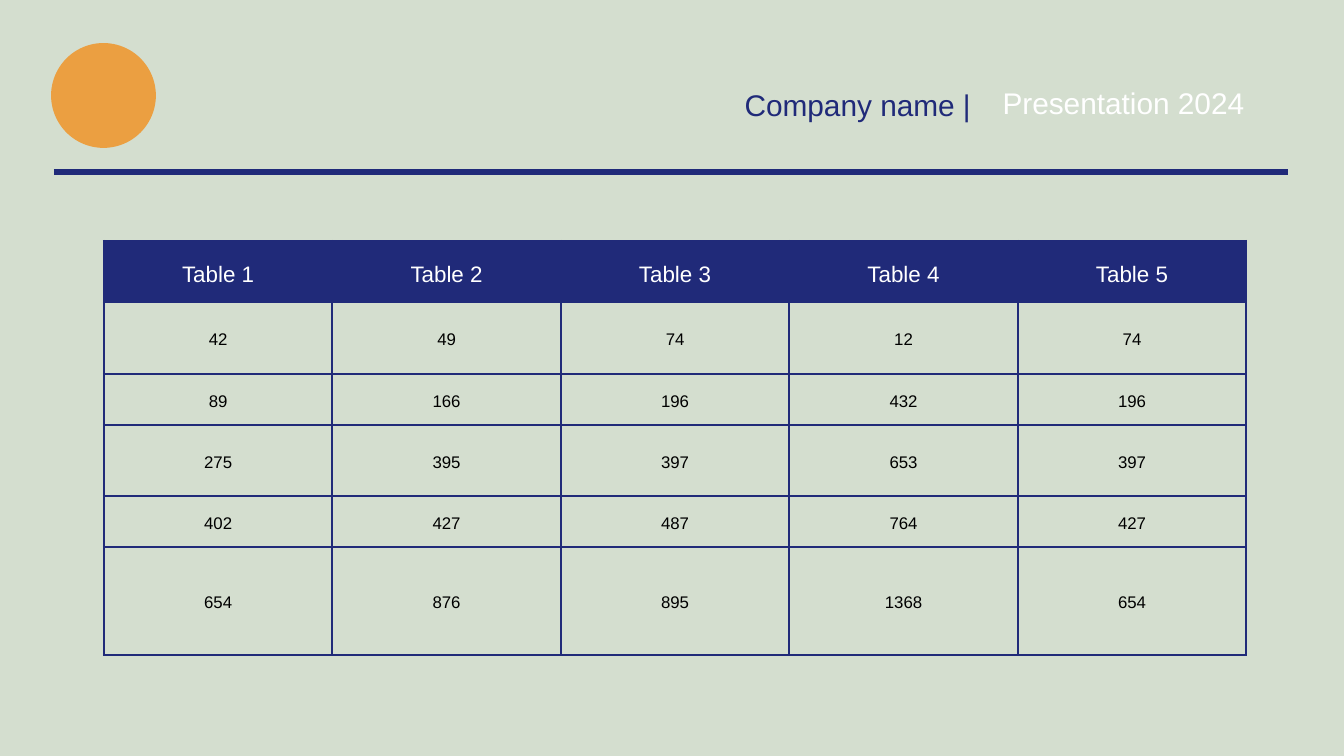
"""Build a slide with a header band and a five-column table."""
from dataclasses import dataclass

from lxml import etree
from pptx import Presentation
from pptx.dml.color import RGBColor
from pptx.enum.shapes import MSO_CONNECTOR, MSO_SHAPE
from pptx.enum.text import MSO_ANCHOR, MSO_AUTO_SIZE, PP_ALIGN
from pptx.oxml.ns import qn
from pptx.slide import Slide
from pptx.table import _Cell
from pptx.text.text import TextFrame
from pptx.util import Inches, Pt

STRAIGHT = MSO_CONNECTOR.STRAIGHT
OVAL = MSO_SHAPE.OVAL
MIDDLE = MSO_ANCHOR.MIDDLE
CENTER = PP_ALIGN.CENTER
LEFT = PP_ALIGN.LEFT
FIT_SHAPE = MSO_AUTO_SIZE.SHAPE_TO_FIT_TEXT

SAGE = RGBColor(0xD4, 0xDE, 0xCF)
NAVY = RGBColor(0x20, 0x2A, 0x79)
ORANGE = RGBColor(0xEB, 0x9F, 0x41)
WHITE = RGBColor(0xFF, 0xFF, 0xFF)
BLACK = RGBColor(0x00, 0x00, 0x00)

WIDTH = Inches(10)
HEIGHT = WIDTH * 9 // 16
FONT = "Arial"
BORDER = Pt(1.1)
COLUMN_WIDTH = Inches(1.7)
ROW_HEIGHTS = (0.46, 0.53, 0.38, 0.53, 0.38, 0.8)
CELL_FORMAT = {
    "vertical_anchor": MIDDLE,
    "margin_left": Inches(0.08),
    "margin_right": Inches(0.08),
    "margin_top": Inches(0.08),
    "margin_bottom": Inches(0.08),
}
LABEL_FORMAT = {
    "word_wrap": True,
    "auto_size": FIT_SHAPE,
    "margin_left": 0,
    "margin_right": 0,
    "margin_top": 0,
    "margin_bottom": 0,
}
TABLE_FORMAT = {"first_row": False, "horz_banding": False}

HEADINGS = tuple(f"Table {number}" for number in range(1, 6))
VALUES = (
    (42, 49, 74, 12, 74),
    (89, 166, 196, 432, 196),
    (275, 395, 397, 653, 397),
    (402, 427, 487, 764, 427),
    (654, 876, 895, 1368, 654),
)


@dataclass(frozen=True)
class Label:
    """A header text placed by percentages of the slide's size."""

    text: str
    left: float
    top: float
    width: float
    color: RGBColor


LABELS = (
    Label("Presentation 2024", 74.6, 9.8, 20.7, WHITE),
    Label("Company name |", 55.4, 10.1, 19.2, NAVY),
)


def across(percent: float) -> int:
    """Return a percentage of the slide's width."""
    return round(WIDTH * percent / 100)


def down(percent: float) -> int:
    """Return a percentage of the slide's height."""
    return round(HEIGHT * percent / 100)


def apply_format(target: object, values: dict) -> None:
    """Set each named attribute on the target."""
    for name, value in values.items():
        setattr(target, name, value)


def write_text(
    frame: TextFrame, text: str, size: float, color: RGBColor, spacing: float, alignment: PP_ALIGN
) -> None:
    """Write one formatted paragraph."""
    paragraph = frame.paragraphs[0]
    apply_format(paragraph, {"alignment": alignment, "line_spacing": spacing})
    run = paragraph.add_run()
    run.text = text
    apply_format(run.font, {"name": FONT, "size": Pt(size), "bold": False})
    run.font.color.rgb = color


def add_borders(cell: _Cell) -> None:
    """Draw a navy line on all four sides of a cell."""
    properties = cell._tc.get_or_add_tcPr()
    for position, side in enumerate(("lnL", "lnR", "lnT", "lnB")):
        line = etree.Element(qn(f"a:{side}"), w=str(BORDER))
        fill = etree.SubElement(line, qn("a:solidFill"))
        etree.SubElement(fill, qn("a:srgbClr"), val=str(NAVY))
        properties.insert(position, line)


def add_label(slide: Slide, label: Label) -> None:
    """Add a header text."""
    shape = slide.shapes.add_textbox(
        across(label.left), down(label.top), across(label.width), down(5)
    )
    apply_format(shape.text_frame, LABEL_FORMAT)
    write_text(shape.text_frame, label.text, 16, label.color, 1.3, LEFT)


def add_value_table(slide: Slide) -> None:
    """Add the table with its heading row and values."""
    rows = (HEADINGS, *VALUES)
    table = slide.shapes.add_table(
        len(rows), len(HEADINGS), across(7.73), down(31.85),
        COLUMN_WIDTH * len(HEADINGS), Inches(sum(ROW_HEIGHTS)),
    ).table
    apply_format(table, TABLE_FORMAT)
    for column in table.columns:
        column.width = COLUMN_WIDTH
    for row_index, (row, height) in enumerate(zip(rows, ROW_HEIGHTS)):
        table.rows[row_index].height = Inches(height)
        is_heading = row_index == 0
        size, color = (12, WHITE) if is_heading else (9, BLACK)
        for column_index, value in enumerate(row):
            cell = table.cell(row_index, column_index)
            apply_format(cell, CELL_FORMAT)
            if is_heading:
                cell.fill.solid()
                cell.fill.fore_color.rgb = NAVY
            else:
                cell.fill.background()
            add_borders(cell)
            write_text(cell.text_frame, str(value), size, color, 1.2, CENTER)


def add_circle(slide: Slide) -> None:
    """Add the orange circle."""
    diameter = across(7.8)
    shape = slide.shapes.add_shape(OVAL, across(3.8), down(5.7), diameter, diameter)
    shape.shadow.inherit = False
    shape.fill.solid()
    shape.fill.fore_color.rgb = ORANGE
    shape.line.fill.background()


def add_rule(slide: Slide) -> None:
    """Add the line below the header."""
    level = down(22.75)
    rule = slide.shapes.add_connector(STRAIGHT, across(4), level, across(95.8), level)
    rule.line.color.rgb = NAVY
    rule.line.width = Pt(3)
    etree.SubElement(rule._element.spPr, qn("a:effectLst"))


def main() -> None:
    """Build and save the presentation."""
    presentation = Presentation()
    apply_format(presentation, {"slide_width": WIDTH, "slide_height": HEIGHT})
    slide = presentation.slides.add_slide(presentation.slide_layouts[6])
    slide.background.fill.solid()
    slide.background.fill.fore_color.rgb = SAGE
    add_value_table(slide)
    add_circle(slide)
    add_rule(slide)
    for label in LABELS:
        add_label(slide, label)
    presentation.save("out.pptx")


if __name__ == "__main__":
    main()
